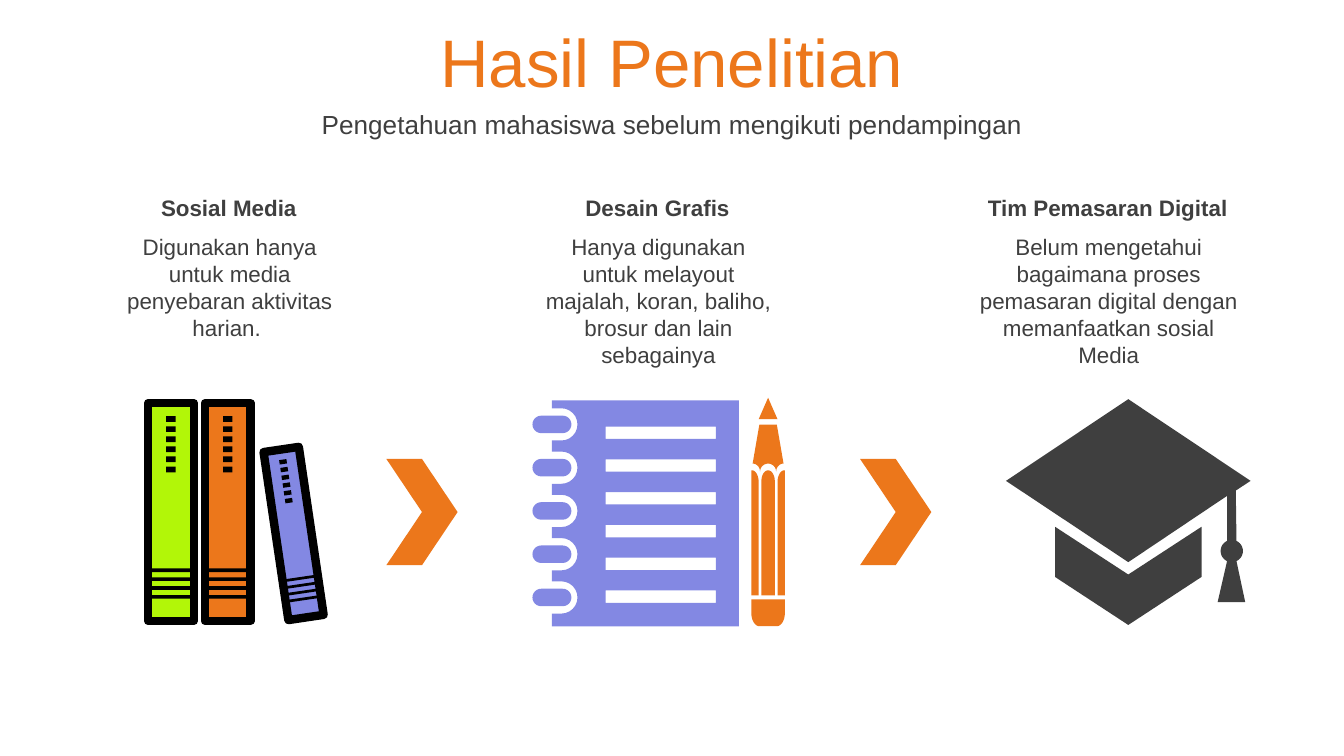
from math import cos, pi, radians, sin

from pptx import Presentation
from pptx.dml.color import RGBColor
from pptx.enum.shapes import MSO_SHAPE as SHAPE
from pptx.enum.text import MSO_ANCHOR as ANCHOR, MSO_AUTO_SIZE as FIT, PP_ALIGN as ALIGN
from pptx.util import Inches, Pt

COLORS = {"orange": "EC771B", "lime": "B2F608", "violet": "8388E3",
          "dark": "3F3F3F", "black": "000000"}
COLUMNS = [
    (7.7, 18.8, "Sosial Media",
     "Digunakan hanya untuk media penyebaran aktivitas harian. "),
    (39.6, 18.8, "Desain Grafis",
     "Hanya digunakan untuk melayout majalah, koran, baliho, brosur dan lain sebagainya"),
    (71.5, 22, "Tim Pemasaran Digital",
     "Belum mengetahui bagaimana proses pemasaran digital dengan memanfaatkan sosial Media"),
]


def rgb(name):
    return RGBColor.from_string(COLORS[name])


def write(tf, text, size=12, color="dark", bold=False, anchor=ANCHOR.TOP):
    tf.word_wrap = True
    tf.auto_size = FIT.NONE
    tf.vertical_anchor = anchor
    p = tf.paragraphs[0]
    p.alignment = ALIGN.CENTER
    p.space_before = Pt(0)
    r = p.add_run()
    r.text = text
    r.font.name = "Arial"
    r.font.size = Pt(size)
    r.font.bold = bold
    r.font.color.rgb = rgb(color)


def arc(cx, cy, rx, ry, start, end, steps=12):
    angles = [pi * (start + (end - start) * i / steps) / 180 for i in range(steps + 1)]
    return [(cx + rx * cos(a), cy + ry * sin(a)) for a in angles]


def box(x, y, w, h):
    return [(x, y), (x + w, y), (x + w, y + h), (x, y + h)]


class Deck:
    def __init__(self, width):
        self.prs = Presentation()
        self.prs.slide_width, self.prs.slide_height = Inches(width), Inches(width * 9 / 16)
        self.cell = self.prs.slide_width / 100
        self.s = self.prs.slides.add_slide(self.prs.slide_layouts[0])

    def grid(self, *cells):
        return [round(c * self.cell) for c in cells]

    def heading(self, idx, top, height, text, **style):
        sp = self.s.placeholders[idx]
        sp.left, sp.top, sp.width, sp.height = self.grid(0, top, 100, height)
        write(sp.text_frame, text, anchor=ANCHOR.MIDDLE, **style)

    def text(self, x, y, w, h, text, **style):
        sp = self.s.shapes.add_textbox(*self.grid(x, y, w, h))
        write(sp.text_frame, text, **style)

    def group(self):
        return self.s.shapes.add_group_shape().shapes

    def paint(self, sp, color, line=None):
        sp.shadow.inherit = False
        sp.fill.solid()
        sp.fill.fore_color.rgb = rgb(color)
        if line:
            sp.line.color.rgb = rgb("black")
            sp.line.width = Pt(line)
        else:
            sp.line.fill.background()

    def shape(self, kind, cx, cy, w, h, color, line=None, turn=0, into=None):
        shapes = into or self.s.shapes
        sp = shapes.add_shape(kind, *self.grid(cx - w / 2, cy - h / 2, w, h))
        sp.rotation = turn
        self.paint(sp, color, line)

    def outline(self, contours, color, into=None):
        shapes = into or self.s.shapes
        fb = None
        for contour in contours:
            first, *rest = [self.grid(*point) for point in contour]
            if fb is None:
                fb = shapes.build_freeform(*first, scale=1.0)
            else:
                fb.move_to(*first)
            fb.add_line_segments(rest, close=True)
        self.paint(fb.convert_to_shape(), color)

    def book(self, shapes, cx, cy, color, scale=1, turn=0):
        def part(offset, w, h, color, line=None):
            x = cx - offset * scale * sin(radians(turn))
            y = cy + offset * scale * cos(radians(turn))
            self.shape(SHAPE.RECTANGLE, x, y, w * scale, h * scale,
                       color, line, turn, shapes)

        part(0, 3.4, 16.2, color, 4.5)
        for i in range(4):
            part(4.33 + 0.66 * i, 3.4, 0.27, "black")
        for i in range(6):
            part(-6.92 + 0.75 * i, 0.7, 0.43, "black")

    def notebook(self, shapes):
        rings = [31.58 + 3.22 * i for i in range(5)]
        cover = [(41.07, 29.8), (54.97, 29.8), (54.97, 46.6), (41.07, 46.6)]
        for y in reversed(rings):
            cover += [(41.07, y + 1.2), *arc(41.77, y, 1.2, 1.2, 90, -90), (41.07, y - 1.2)]
        lines = [box(45.07, 31.74 + 2.44 * i, 8.2, 0.92) for i in range(6)]
        pills = [arc(41.87, y, 0.65, 0.65, -90, 90) + arc(40.27, y, 0.65, 0.65, 90, 270)
                 for y in rings]
        self.outline([cover, *lines, *pills], "violet", shapes)

    def pencil(self, shapes):
        cx = 57.15
        tip = [(cx - 0.7, 31.2), (cx + 0.7, 31.2), (cx, 29.6)]
        cone = [(cx - 0.65, 31.6), (cx + 0.65, 31.6), (cx + 1.15, 34.5),
                *arc(cx + 1.15, 35.1, 0.55, 0.6, 270, 180),
                *arc(cx, 35.1, 0.6, 0.6, 0, -180),
                *arc(cx - 1.15, 35.1, 0.55, 0.6, 0, -90)]
        core = [(cx - 0.5, 44.3), *arc(cx, 35.8, 0.5, 0.8, 180, 360), (cx + 0.5, 44.3)]
        sides = [[(cx + k * 1.25, 44.3), (cx + k * 1.25, 35),
                  *[(cx + k * x, y) for x, y in arc(1.2, 35.9, 0.5, 0.9, 270, 180)],
                  (cx + k * 0.7, 44.3)] for k in (-1, 1)]
        eraser = [(cx - 1.25, 44.6), (cx + 1.25, 44.6),
                  *arc(cx + 0.65, 45.6, 0.6, 1, 0, 90),
                  *arc(cx - 0.65, 45.6, 0.6, 1, 90, 180)]
        self.outline([tip, cone, core, *sides, eraser], "orange", shapes)

    def cap(self):
        cx = 83.95
        base = [(cx - 5.45, 39.2), (cx, 42.75), (cx + 5.45, 39.2),
                (cx + 5.45, 42.93), (cx, 46.5), (cx - 5.45, 42.93)]
        board = [(cx, 29.7), (93.05, 35.78), (91.95, 36.5),
                 *arc(91.65, 41, 0.83, 0.83, -65, 65), (92.65, 44.8), (90.6, 44.8),
                 *arc(91.65, 41, 0.83, 0.83, 115, 245), (91.3, 36.9), (cx, 41.83),
                 (74.85, 35.78)]
        self.outline([base, board], "dark")


def main():
    deck = Deck(10)
    deck.heading(0, 1.35, 6.3, "Hasil Penelitian", size=36, color="orange")
    deck.heading(1, 7.7, 3.1, "Pengetahuan mahasiswa sebelum mengikuti pendampingan", size=14)

    books = deck.group()
    deck.book(books, 16.95, 38.1, "orange")
    deck.book(books, 12.72, 38.1, "lime")
    deck.book(books, 21.85, 39.7, "violet", scale=0.78, turn=-8.4)
    stationery = deck.group()
    deck.notebook(stationery)
    deck.pencil(stationery)
    deck.cap()

    for cx in (31.4, 66.65):
        deck.shape(SHAPE.CHEVRON, cx, 38.1, 5.3, 7.9, "orange")
    for x, w, title, body in COLUMNS:
        deck.text(x, 16.88, w, 11.1, body)
        deck.text(x, 13.95, w - 0.15, 3, title, bold=True)
    deck.prs.save("out.pptx")


if __name__ == "__main__":
    main()
